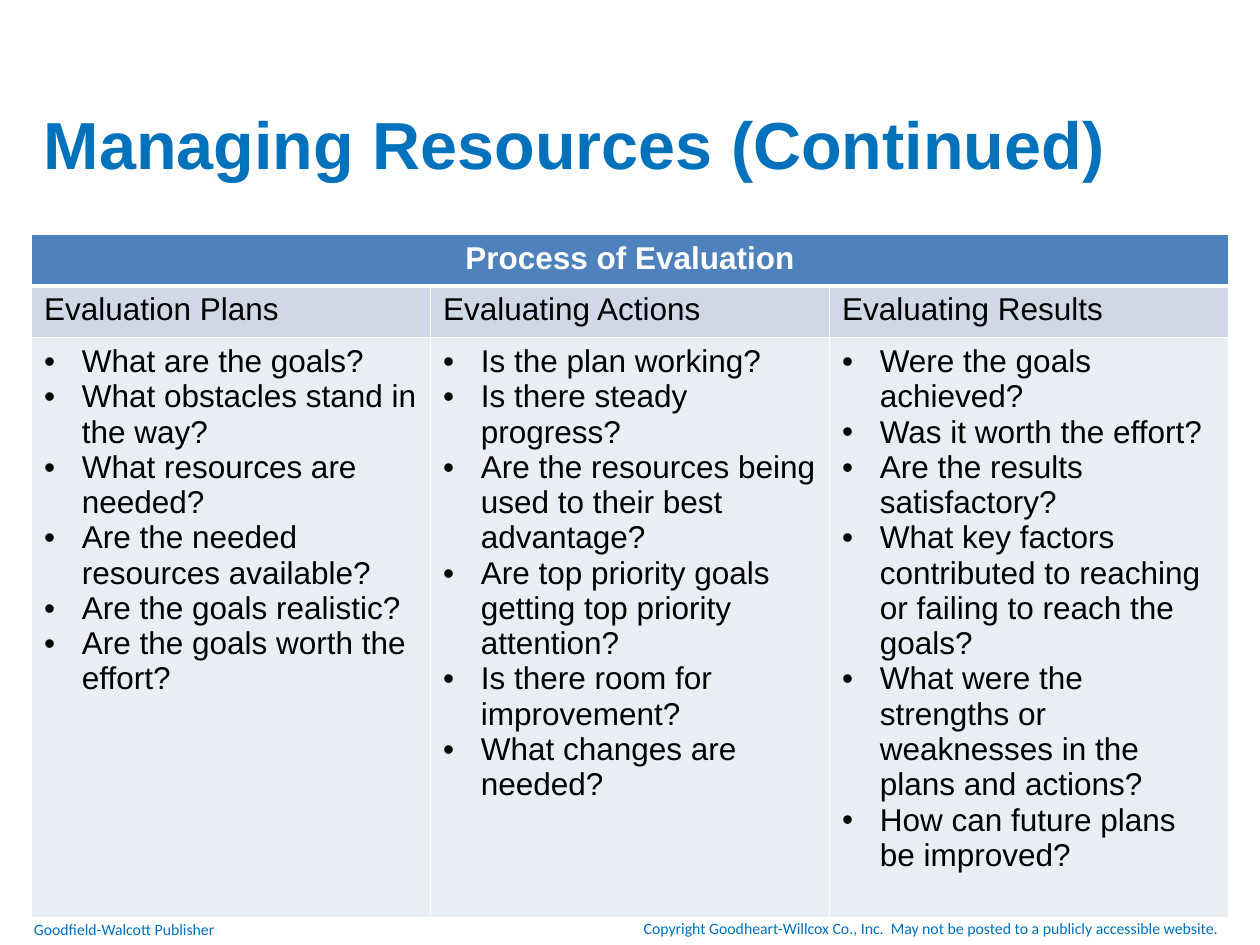
"""Builds the slide on managing resources with its evaluation table."""
from lxml import etree
from pptx import Presentation
from pptx.dml.color import RGBColor
from pptx.enum import text
from pptx.oxml import ns
from pptx.util import Inches, Pt

LEFT, CENTER, RIGHT = text.PP_ALIGN.LEFT, text.PP_ALIGN.CENTER, text.PP_ALIGN.RIGHT
TOP, BOTTOM = text.MSO_ANCHOR.TOP, text.MSO_ANCHOR.BOTTOM

LABELS = [
    ("Copyright Goodheart-Willcox Co., Inc.  May not be posted to a publicly accessible website.",
     (4.08, 7.24, 5.68, 0.27), "Calibri", 9, "0071BB", False, RIGHT, TOP),
    ("Goodfield-Walcott Publisher",
     (0.17, 7.25, 3.08, 0.25), "Calibri", 9, "0070C0", False, LEFT, TOP),
    ("Managing Resources (Continued)",
     (0.25, 0.08, 9.5, 1.42), "Arial", 38, "0071BB", True, LEFT, BOTTOM),
]
HEADING = "Process of Evaluation"
STAGES = {
    "Evaluation Plans": [
        "What are the goals?",
        "What obstacles stand in the way?",
        "What resources are needed?",
        "Are the needed resources available?",
        "Are the goals realistic?",
        "Are the goals worth the effort?",
    ],
    "Evaluating Actions": [
        "Is the plan working?",
        "Is there steady progress?",
        "Are the resources being used to their best advantage?",
        "Are top priority goals getting top priority attention?",
        "Is there room for improvement?",
        "What changes are needed?",
    ],
    "Evaluating Results": [
        "Were the goals achieved?",
        "Was it worth the effort?",
        "Are the results satisfactory?",
        "What key factors contributed to reaching or failing to reach the goals?",
        "What were the strengths or weaknesses in the plans and actions?",
        "How can future plans be improved?",
    ],
}
TABLE_AREA = (0.25, 1.86, 9.5, 5.4)
ROW_HEIGHTS = (0.41, 0.41, 4.58)
ROW_FILLS = ("4F81BD", "D0D8E8", "E9EDF4")


def rgb(color):
    return RGBColor.from_string(color)


def style(paragraph, family, size, color, bold=False, align=LEFT):
    paragraph.alignment = align
    font = paragraph.font
    font.name, font.size, font.bold = family, Pt(size), bold
    font.color.rgb = rgb(color)


def add_bullet(paragraph):
    properties = paragraph._p.get_or_add_pPr()
    properties.set("marL", str(Inches(0.3)))
    properties.set("indent", str(Inches(-0.3)))
    etree.SubElement(properties, ns.qn("a:buFont"), typeface="Arial")
    etree.SubElement(properties, ns.qn("a:buChar"), char="•")


def add_borders(cell, widths):
    properties = cell._tc.get_or_add_tcPr()
    for position, (side, width) in enumerate(zip("LRTB", widths)):
        line = etree.Element(ns.qn(f"a:ln{side}"), w=str(Pt(width)))
        fill = etree.SubElement(line, ns.qn("a:solidFill"))
        etree.SubElement(fill, ns.qn("a:srgbClr"), val="FFFFFF")
        properties.insert(position, line)


def add_label(slide, wording, area, family, size, color, bold, align, anchor):
    frame = slide.shapes.add_textbox(*map(Inches, area)).text_frame
    frame.word_wrap = True
    frame.vertical_anchor = anchor
    frame.text = wording
    style(frame.paragraphs[0], family, size, color, bold, align)


def add_evaluation(slide):
    rows = [[HEADING], list(STAGES), ["\n".join(questions) for questions in STAGES.values()]]
    area = map(Inches, TABLE_AREA)
    table = slide.shapes.add_table(len(rows), len(STAGES), *area).table
    table.cell(0, 0).merge(table.cell(0, len(STAGES) - 1))
    for r, (wordings, height, fill) in enumerate(zip(rows, ROW_HEIGHTS, ROW_FILLS)):
        table.rows[r].height = Inches(height)
        for c in range(len(STAGES)):
            cell = table.cell(r, c)
            cell.fill.solid()
            cell.fill.fore_color.rgb = rgb(fill)
            add_borders(cell, (1, 1, 3 if r == 1 else 1, 3 if r == 0 else 1))
            if c < len(wordings):
                cell.text = wordings[c]
            for paragraph in cell.text_frame.paragraphs:
                if r == 2:
                    add_bullet(paragraph)
                if r == 0:
                    style(paragraph, "Arial", 18, "FFFFFF", True, CENTER)
                else:
                    style(paragraph, "Arial", 18, "000000")


def main():
    deck = Presentation()
    deck.slide_width, deck.slide_height = Inches(10), Inches(7.5)
    slide = deck.slides.add_slide(deck.slide_layouts[6])
    for label in LABELS:
        add_label(slide, *label)
    add_evaluation(slide)
    deck.save("out.pptx")


if __name__ == "__main__":
    main()
